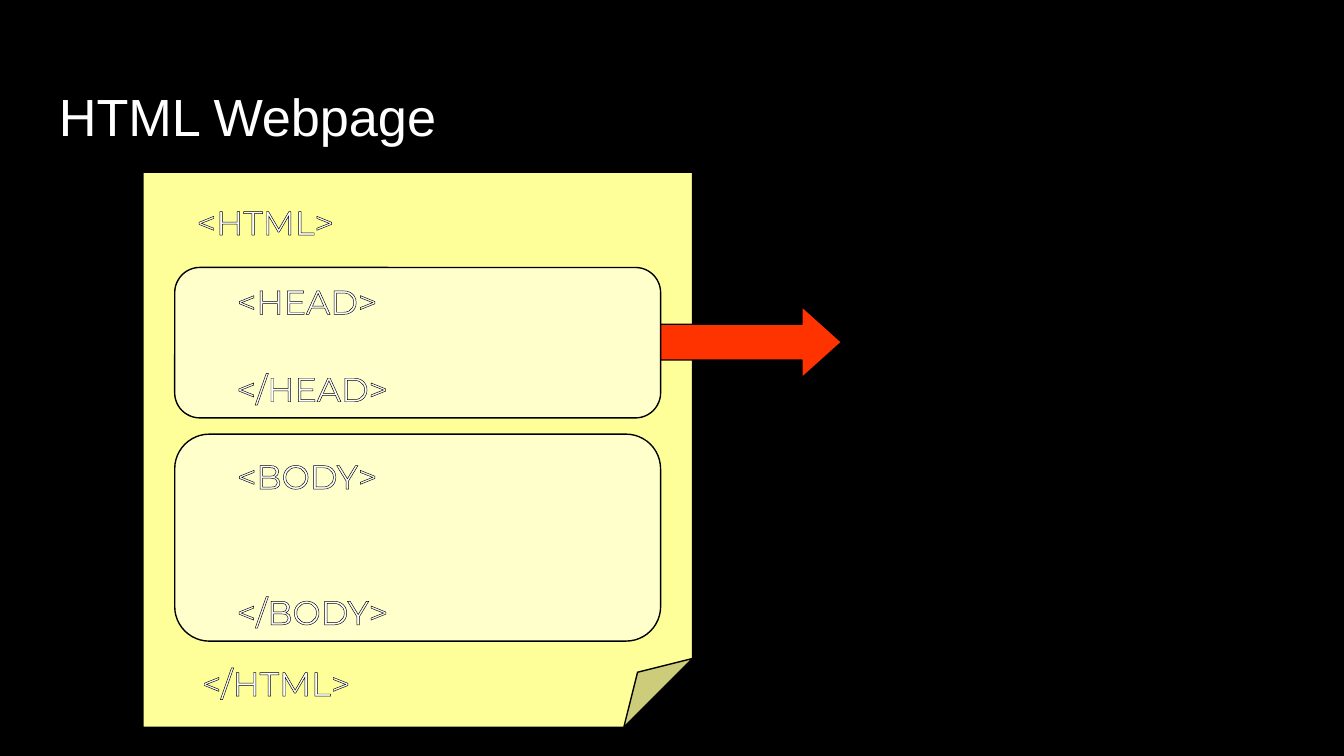
from dataclasses import dataclass

from lxml import etree
from pptx import Presentation
from pptx.dml.color import RGBColor
from pptx.enum.shapes import MSO_SHAPE
from pptx.enum.text import MSO_ANCHOR, PP_ALIGN
from pptx.oxml.ns import qn
from pptx.util import Pt

SHEET = MSO_SHAPE.FOLDED_CORNER
ROUND = MSO_SHAPE.ROUNDED_RECTANGLE
ARROW = MSO_SHAPE.RIGHT_ARROW
TOP = MSO_ANCHOR.TOP
CENTER = PP_ALIGN.CENTER


@dataclass(frozen=True)
class Theme:
    back: str = "000000"
    ink: str = "FFFFFF"
    edge: str = "000000"
    sheet: str = "FFFF99"
    panel: str = "FFFFCC"
    arrow: str = "FF3300"
    title_font: str = "Arial"
    tag_font: str = "Montserrat"
    title_size: float = 28
    tag_size: float = 18
    stroke: float = 0.75


THEME = Theme()


def color(code):
    return RGBColor.from_string(code)


def add_form(slide, kind, box, fill, adjust=()):
    form = slide.shapes.add_shape(kind, *map(Pt, box))
    form.shadow.inherit = False
    form.fill.solid()
    form.fill.fore_color.rgb = color(fill)
    form.line.color.rgb = color(THEME.edge)
    form.line.width = Pt(THEME.stroke)
    for index, value in enumerate(adjust):
        form.adjustments[index] = value
    return form


def add_sheet(slide, box):
    """Add the folded sheet, whose corner size python-pptx does not expose."""
    form = add_form(slide, SHEET, box, THEME.sheet)
    shape = form._element.spPr.find(qn("a:prstGeom"))
    shape.set("prst", "foldedCorner")
    for part in list(shape):
        shape.remove(part)
    values = etree.SubElement(shape, qn("a:avLst"))
    etree.SubElement(values, qn("a:gd"), name="adj", fmla="val 12500")


def add_text(slide, box, text, font, size):
    frame = slide.shapes.add_textbox(*map(Pt, box)).text_frame
    frame.vertical_anchor = TOP
    frame.text = text
    run = frame.paragraphs[0].runs[0]
    run.font.name = font
    run.font.size = Pt(size)
    run.font.color.rgb = color(THEME.ink)
    return frame


def outline(run):
    """Draw a thin edge around the letters of a run."""
    props = run.font._element
    line = etree.Element(qn("a:ln"), w=str(Pt(THEME.stroke)))
    fill = etree.SubElement(line, qn("a:solidFill"))
    etree.SubElement(fill, qn("a:srgbClr"), val=THEME.edge)
    props.insert(0, line)


def add_tag(slide, box, text):
    frame = add_text(slide, box, text, THEME.tag_font, THEME.tag_size)
    frame.word_wrap = False
    para = frame.paragraphs[0]
    para.alignment = CENTER
    outline(para.runs[0])


def add_pair(slide, left, name, tops, widths):
    """Place the opening and closing tag of an element."""
    for mark, top, width in zip(("<", "</"), tops, widths):
        add_tag(slide, (left, top, width, 25.2), f"{mark}{name}>")


def add_title(slide, box):
    frame = add_text(slide, box, "HTML Webpage", THEME.title_font, THEME.title_size)
    frame.word_wrap = True
    frame.margin_left = frame.margin_right = frame.margin_bottom = Pt(7.2)
    frame.margin_top = Pt(10)


def add_panel(slide, box, name, tops):
    left, top, _, _ = box
    add_form(slide, ROUND, box, THEME.panel, [0.167])
    add_pair(slide, left + 17.3, name, [top + gap for gap in tops], (107.3, 113))


def add_page(slide, box):
    left, top, width, _ = box
    inset = 17.1
    inner = width - 2 * inset
    add_sheet(slide, box)
    add_pair(slide, left + 12, "HTML", (top + 12.2, top + 259.2), (107.3, 118.8))
    add_panel(slide, (left + inset, top + 140.4, inner, 110.9), "BODY", (7.9, 80.6))
    add_form(slide, ARROW, (left + 261.4, top + 72, 113, 38.2),
             THEME.arrow, [0.5, 0.556])
    add_panel(slide, (left + inset, top + 51.1, inner, 80.6), "HEAD", (3.6, 50.4))


def main():
    deck = Presentation()
    deck.slide_width, deck.slide_height = Pt(720), Pt(405)
    slide = deck.slides.add_slide(deck.slide_layouts[6])
    slide.background.fill.solid()
    slide.background.fill.fore_color.rgb = color(THEME.back)
    add_title(slide, (24.5, 35.3, 671, 45.4))
    add_page(slide, (76.5, 92.2, 294.5, 297.4))
    deck.save("out.pptx")


if __name__ == "__main__":
    main()
